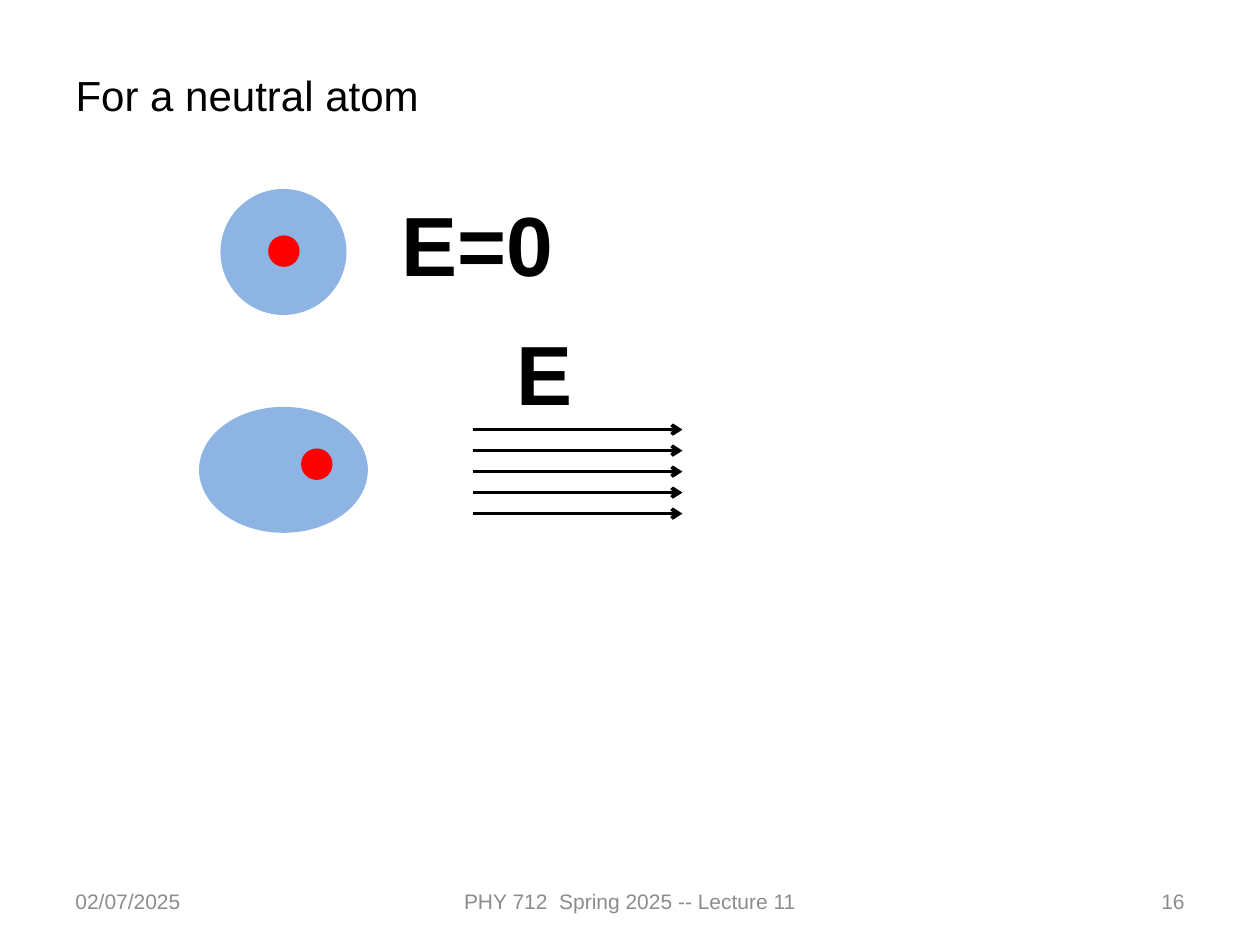
from pptx import Presentation
from pptx.dml.color import RGBColor
from pptx.enum.shapes import MSO_CONNECTOR, MSO_SHAPE
from pptx.enum.text import MSO_ANCHOR, PP_ALIGN
from pptx.oxml.ns import qn
from pptx.util import Pt
from lxml import etree

LEFT, CENTER, RIGHT = PP_ALIGN.LEFT, PP_ALIGN.CENTER, PP_ALIGN.RIGHT
TOP, MIDDLE = MSO_ANCHOR.TOP, MSO_ANCHOR.MIDDLE
OVAL = MSO_SHAPE.OVAL
STRAIGHT = MSO_CONNECTOR.STRAIGHT

FONT = "Arial"
COLORS = {
    "text": "000000",
    "footer": "8C8C8C",
    "cloud": "8EB4E3",
    "nucleus": "FF0000",
}
NUCLEUS_SIZE = 18
ARROW_COUNT = 5
ARROW_GAP = 12


def color(name):
    return RGBColor.from_string(COLORS[name])


def place(shape, left, top, width, height):
    shape.left, shape.top = Pt(left), Pt(top)
    shape.width, shape.height = Pt(width), Pt(height)


def write_text(shape, text, size, color_name="text", bold=False,
               alignment=LEFT, anchor=TOP):
    frame = shape.text_frame
    frame.word_wrap = True
    frame.vertical_anchor = anchor
    paragraph = frame.paragraphs[0]
    paragraph.alignment = alignment
    run = paragraph.add_run()
    run.text = text
    run.font.name = FONT
    run.font.size = Pt(size)
    run.font.bold = bold
    run.font.color.rgb = color(color_name)


def add_label(slide, box, text, size, **style):
    left, top, width, height = map(Pt, box)
    shape = slide.shapes.add_textbox(left, top, width, height)
    write_text(shape, text, size, **style)


def add_ellipse(slide, left, top, width, height, color_name):
    shape = slide.shapes.add_shape(OVAL, Pt(left), Pt(top), Pt(width), Pt(height))
    shape.shadow.inherit = False
    shape.fill.solid()
    shape.fill.fore_color.rgb = color(color_name)
    shape.line.fill.background()


def add_field_arrow(slide, left, right, y):
    connector = slide.shapes.add_connector(STRAIGHT, Pt(left), Pt(y), Pt(right), Pt(y))
    connector.line.width = Pt(2)
    connector.line.color.rgb = color("text")
    line = connector.line._get_or_add_ln()
    etree.SubElement(line, qn("a:tailEnd"), type="arrow")
    etree.SubElement(connector._element.spPr, qn("a:effectLst"))


def main():
    presentation = Presentation()
    presentation.slide_width, presentation.slide_height = Pt(720), Pt(540)
    slide = presentation.slides.add_slide(presentation.slide_layouts[5])

    # Title
    title = slide.shapes.title
    place(title, 36, 36, 588, 36)
    write_text(title, "For a neutral atom", 24)

    # Footer
    footers = [
        (36, 168, "02/07/2025", LEFT),
        (246, 228, "PHY 712  Spring 2025 -- Lecture 11", CENTER),
        (516, 168, "16", RIGHT),
    ]
    for left, width, text, alignment in footers:
        add_label(slide, (left, 500.5, width, 28.75), text, 12,
                  color_name="footer", alignment=alignment, anchor=MIDDLE)

    # Electron clouds: round without field, stretched in the field
    add_ellipse(slide, 126, 108, 72, 72, "cloud")
    add_ellipse(slide, 113.75, 232.5, 96.5, 72, "cloud")

    # Nuclei
    for left, top in [(153.25, 134.5), (172, 256.25)]:
        add_ellipse(slide, left, top, NUCLEUS_SIZE, NUCLEUS_SIZE, "nucleus")

    # Electric field lines
    for index in range(ARROW_COUNT):
        add_field_arrow(slide, 270, 390, 245.5 + index * ARROW_GAP)

    # Field labels
    for left, top, text in [(222.5, 106.5, "E=0"), (288, 180, "E")]:
        add_label(slide, (left, top, 108, 65.5), text, 48, bold=True)

    presentation.save("out.pptx")


if __name__ == "__main__":
    main()
